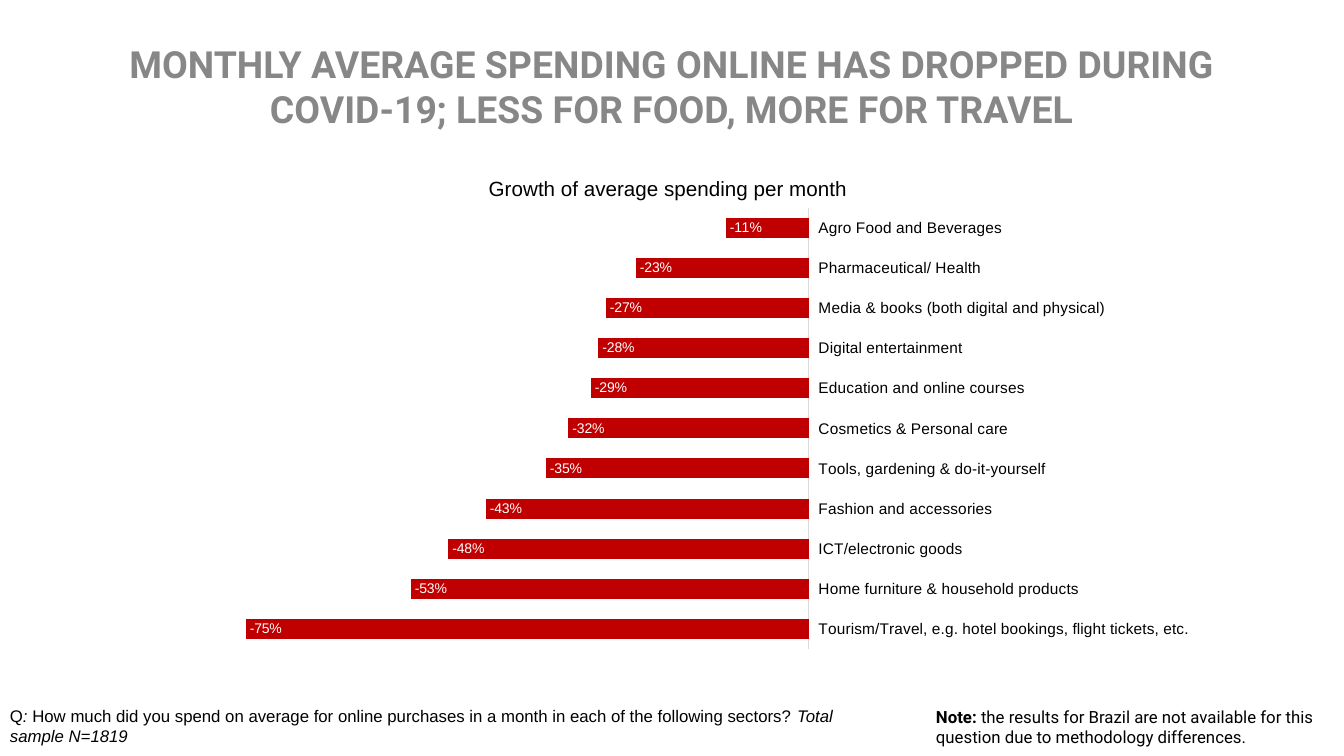
from lxml.etree import SubElement
from pptx import Presentation
from pptx.chart.data import CategoryChartData
from pptx.dml.color import RGBColor
from pptx.enum.chart import XL_CHART_TYPE, XL_LABEL_POSITION, XL_TICK_LABEL_POSITION, XL_TICK_MARK
from pptx.enum.text import MSO_ANCHOR, MSO_AUTO_SIZE, PP_ALIGN
from pptx.oxml.ns import qn
from pptx.util import Pt

EMU_PER_PX = 9525
BLACK, WHITE, GREY, RED, AXIS_GREY = "000000", "FFFFFF", "878787", "C00000", "D9D9D9"

SPENDING_GROWTH = {
    "Tourism/Travel, e.g. hotel bookings, flight tickets, etc.": -0.75,
    "Home furniture & household products": -0.53,
    "ICT/electronic goods": -0.48,
    "Fashion and accessories": -0.43,
    "Tools, gardening & do-it-yourself": -0.35,
    "Cosmetics & Personal care": -0.32,
    "Education and online courses": -0.29,
    "Digital entertainment": -0.28,
    "Media & books (both digital and physical)": -0.27,
    "Pharmaceutical/ Health": -0.23,
    "Agro Food and Beverages": -0.11,
}


def px(length):
    return length * EMU_PER_PX


def color(hex_value):
    return RGBColor.from_string(hex_value)


def apply(target, values):
    for name, value in values.items():
        setattr(target, name, value)


def style_font(font, name, size, hex_value, **emphasis):
    apply(font, {"name": name, "size": Pt(size), **emphasis})
    font.color.rgb = color(hex_value)


def add_title(slide, wording):
    title = slide.shapes.title
    apply(title, {"left": px(99), "top": px(27), "width": px(1082), "height": px(81)})
    frame = title.text_frame
    apply(frame, {
        "word_wrap": True, "auto_size": MSO_AUTO_SIZE.NONE, "vertical_anchor": MSO_ANCHOR.TOP,
        "margin_left": px(12), "margin_right": px(12), "margin_top": px(12), "margin_bottom": px(12),
    })
    heading = frame.paragraphs[0]
    heading.alignment = PP_ALIGN.CENTER
    run = heading.add_run()
    run.text = wording
    style_font(run.font, "Roboto", 26.7, GREY, bold=True)


def add_caption(slide, bounds, parts, font_name, size=12, wrap=True):
    frame = slide.shapes.add_textbox(*map(px, bounds)).text_frame
    apply(frame, {"word_wrap": wrap, "auto_size": MSO_AUTO_SIZE.SHAPE_TO_FIT_TEXT})
    for wording, emphasis in parts:
        run = frame.paragraphs[0].add_run()
        run.text = wording
        style_font(run.font, font_name, size, BLACK, **emphasis)


def place_plot(chart, **fractions):
    plot_area = chart.plots[0]._element.getparent()
    layout = plot_area.find(qn("c:layout"))
    if layout is None:
        layout = SubElement(plot_area, qn("c:layout"))
        plot_area.insert(0, layout)
    manual = SubElement(layout, qn("c:manualLayout"))
    settings = {"layoutTarget": "inner", "xMode": "edge", "yMode": "edge", **fractions}
    for name, value in settings.items():
        SubElement(manual, qn(f"c:{name}")).set("val", str(value))


def add_growth_chart(slide, bounds):
    growth = CategoryChartData(number_format="0%")
    growth.categories = list(SPENDING_GROWTH)
    growth.add_series("Series 1", list(SPENDING_GROWTH.values()))
    chart = slide.shapes.add_chart(XL_CHART_TYPE.BAR_CLUSTERED, *map(px, bounds), growth).chart
    apply(chart, {"has_title": False, "has_legend": False})
    style_font(chart.font, "Arial", 10, BLACK)
    place_plot(chart, x=0.02, y=0.02, w=0.59, h=0.96)

    sectors = chart.category_axis
    apply(sectors, {
        "major_tick_mark": XL_TICK_MARK.NONE, "minor_tick_mark": XL_TICK_MARK.NONE,
        "tick_label_position": XL_TICK_LABEL_POSITION.HIGH, "has_major_gridlines": False,
    })
    style_font(sectors.tick_labels.font, "Arial", 11, BLACK)
    sectors.format.line.color.rgb = color(AXIS_GREY)
    sectors.format.line.width = Pt(0.75)
    apply(chart.value_axis, {
        "minimum_scale": -0.8, "maximum_scale": 0, "has_major_gridlines": False, "visible": False,
    })

    bars = chart.plots[0]
    apply(bars, {"gap_width": 100, "vary_by_categories": False})
    series = bars.series[0]
    series.invert_if_negative = False
    series.format.fill.solid()
    series.format.fill.fore_color.rgb = color(RED)
    percentages = series.data_labels
    apply(percentages, {
        "show_value": True, "position": XL_LABEL_POSITION.INSIDE_END,
        "number_format": "0%", "number_format_is_linked": False,
    })
    style_font(percentages.font, "Arial", 10, WHITE)


def main():
    deck = Presentation()
    apply(deck, {"slide_width": px(1280), "slide_height": px(720)})
    slide = deck.slides.add_slide(deck.slide_layouts[5])
    add_title(slide, "MONTHLY AVERAGE SPENDING ONLINE HAS DROPPED DURING COVID-19; "
                     "LESS FOR FOOD, MORE FOR TRAVEL")
    add_growth_chart(slide, (179, 189, 969, 438))
    add_caption(slide, (882, 668, 397, 48), [
        ("Note: ", {"bold": True}),
        ("the results for Brazil are not available for this question "
         "due to methodology differences.", {}),
    ], "Roboto")
    add_caption(slide, (0, 667, 806, 48), [
        ("Q", {}),
        (":", {"italic": True}),
        (" How much did you spend on average for online purchases in a month "
         "in each of the following sectors? ", {}),
        ("Total sample N=1819", {"italic": True}),
    ], "Arial")
    add_caption(slide, (456, 163, 362, 34), [("Growth of average spending per month", {})],
                "Arial", size=14.7, wrap=False)
    deck.save("out.pptx")


if __name__ == "__main__":
    main()
